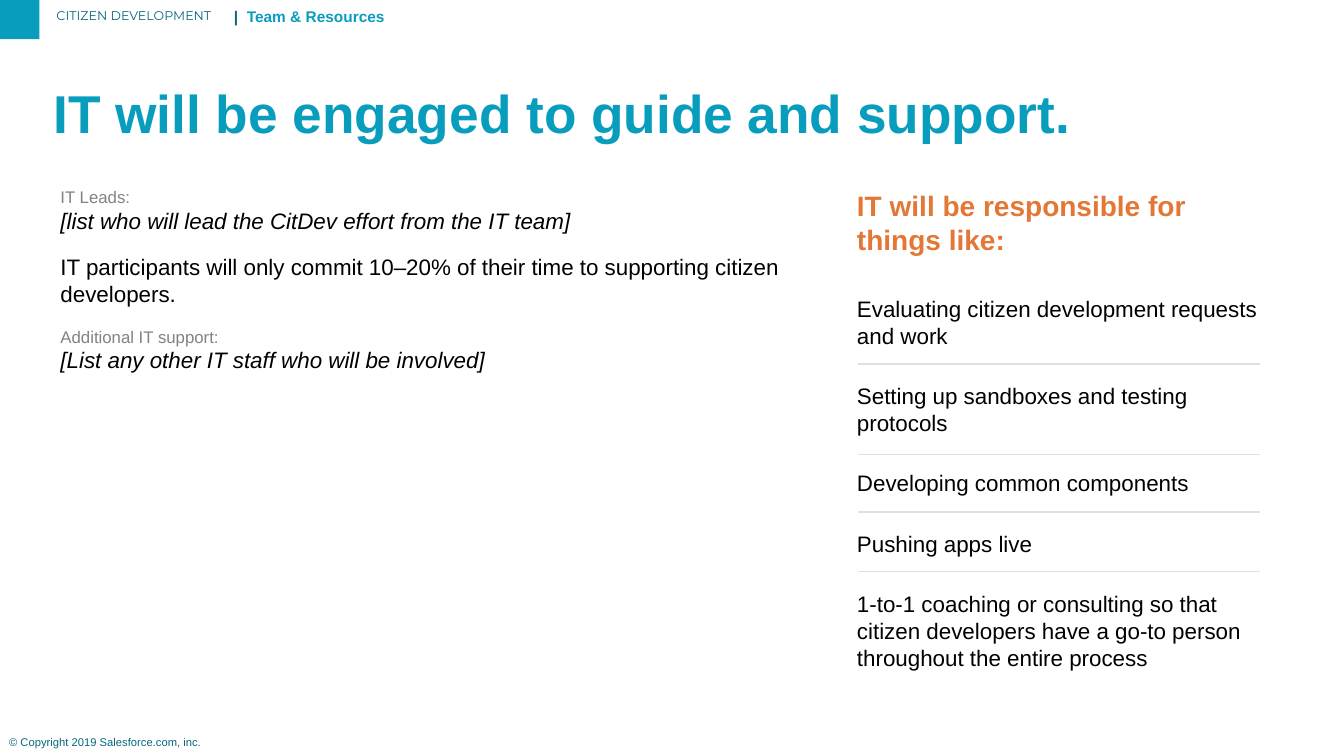
import pptx
import pptx.dml.color
import pptx.enum.shapes
import pptx.enum.text
import pptx.util
import lxml.etree

RGB = pptx.dml.color.RGBColor
TEAL = RGB(0x08, 0x9D, 0xBC)
DEEP = RGB(0x06, 0x68, 0x7D)
ORANGE = RGB(0xE3, 0x77, 0x35)
BLACK = RGB(0, 0, 0)
GREY = RGB(0x82, 0x82, 0x82)
RULE = RGB(0xE0, 0xE0, 0xE0)

deck = pptx.Presentation()
deck.slide_width = pptx.util.Inches(13.33)
deck.slide_height = pptx.util.Inches(7.5)
slide = deck.slides.add_slide(deck.slide_layouts[5])
shapes = slide.shapes


def area(*shares):
    """Turn left, top, width, height in percent of the slide into lengths."""
    sides = (deck.slide_width, deck.slide_height) * 2
    return [int(side * share / 100) for side, share in zip(sides, shares)]


def write(box, text, size=16, color=BLACK, face="Arial", bold=False,
          italic=False, before=0, line=None, join=False, pad=0.05):
    """Add a paragraph to the box, or a run to its last one if join is set."""
    frame = box.text_frame
    frame.word_wrap = True
    frame.auto_size = pptx.enum.text.MSO_AUTO_SIZE.NONE
    frame.vertical_anchor = pptx.enum.text.MSO_ANCHOR.TOP
    frame.margin_left = frame.margin_right = pptx.util.Inches(pad)
    frame.margin_top = frame.margin_bottom = pptx.util.Inches(pad)
    para = frame.paragraphs[-1]
    if para.runs and not join:
        para = frame.add_paragraph()
    para.alignment = pptx.enum.text.PP_ALIGN.LEFT
    para.space_before = pptx.util.Pt(before)
    if line:
        para.line_spacing = line
    run = para.add_run()
    run.text = text
    font = run.font
    font.name, font.size = face, pptx.util.Pt(size)
    font.bold, font.italic = bold, italic
    font.color.rgb = color


# Header and footer
block = shapes.add_shape(pptx.enum.shapes.MSO_SHAPE.RECTANGLE,
                         *area(0, -0.13, 2.93, 5.33))
block.shadow.inherit = False
block.fill.solid()
block.fill.fore_color.rgb = TEAL
block.line.fill.background()

foot = shapes.add_textbox(*area(0.3, 96.67, 16.58, 2.93))
write(foot, "© Copyright 2019 Salesforce.com, inc.", size=8, color=DEEP)

topic = shapes.add_textbox(*area(3.83, 0.8, 29.93, 3.6))
write(topic, "CITIZEN DEVELOPMENT", size=9, color=DEEP, face="Montserrat",
      line=0.8)

crumb = shapes.add_textbox(*area(17.03, 0.8, 28.13, 3.6))
write(crumb, "|  ", size=11, color=DEEP, bold=True, line=0.8)
write(crumb, "Team & Resources", size=11, color=TEAL, bold=True, line=0.8,
      join=True)

title = shapes.title
title.left, title.top, title.width, title.height = area(3.6, 10.93, 93.25, 13.47)
write(title, "IT will be engaged to guide and support.", size=38, color=TEAL,
      bold=True, line=0.9)

# Duties of IT
duties = shapes.add_textbox(*area(63.39, 24.27, 31.66, 62.8))
write(duties, "IT will be responsible for things like:", size=20, color=ORANGE,
      bold=True)
for index, duty in enumerate([
        "Evaluating citizen development requests and work",
        "Setting up sandboxes and testing protocols",
        "Developing common components",
        "Pushing apps live",
        "1-to-1 coaching or consulting so that citizen developers have a "
        "go-to person throughout the entire process"]):
    write(duties, duty, before=24 if index else 28)

for top in (48.13, 60.13, 67.73, 75.6):
    left, level, width, _ = area(63.84, top, 29.93, 0)
    rule = shapes.add_connector(pptx.enum.shapes.MSO_CONNECTOR.STRAIGHT,
                                left, level, left + width, level)
    rule.line.color.rgb = RULE
    rule.line.width = pptx.util.Pt(1)
    lxml.etree.SubElement(rule.line._get_or_add_ln().getparent(),
                          pptx.oxml.ns.qn("a:effectLst"))

# People from IT
people = shapes.add_textbox(*area(4.05, 23.87, 55.51, 66.4))
write(people, "IT Leads:", size=12, color=GREY, pad=0.06)
write(people, "[list who will lead the CitDev effort from the IT team]",
      italic=True, pad=0.06)
write(people, "IT participants will only commit 10–20% of their time to "
      "supporting citizen developers.", before=14, pad=0.06)
write(people, "Additional IT support:", size=12, color=GREY, before=14, pad=0.06)
write(people, "[List any other IT staff who will be involved]", italic=True,
      pad=0.06)

deck.save("out.pptx")
